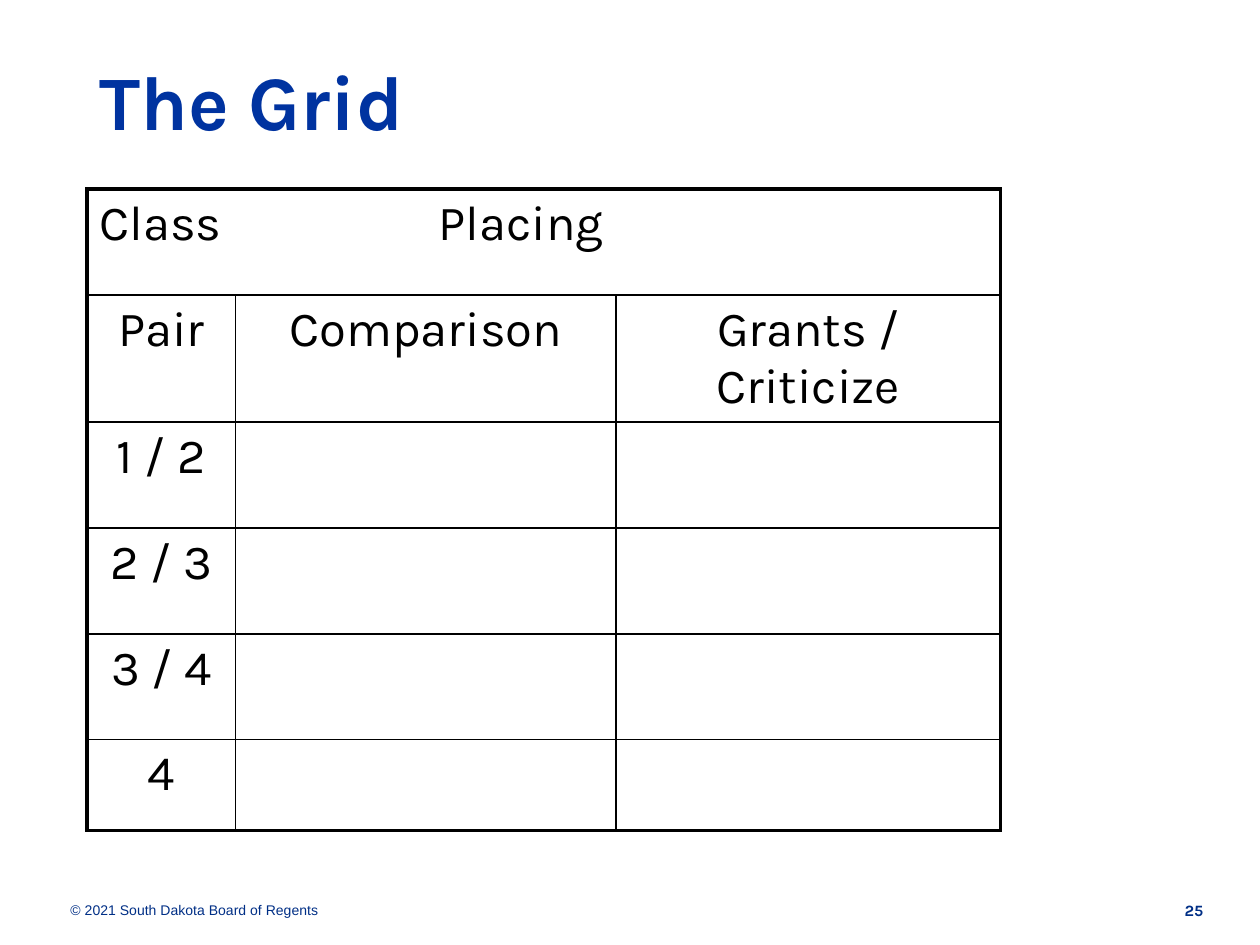
from typing import NamedTuple

from lxml.etree import SubElement
from pptx import Presentation
from pptx.dml.color import RGBColor
from pptx.enum.text import MSO_ANCHOR, PP_ALIGN
from pptx.oxml.ns import qn
from pptx.util import Inches, Pt

COLORS = {"title": "0033A0", "footer": "002F86", "ink": "000000"}
OUTER, INNER = 2.25, 1

COLUMN_WIDTHS = [1.18, 3.02, 3.05]
ROW_HEIGHTS = [0.84] * 5 + [0.72]
ROWS = [
    ["Class", "Placing", ""],
    ["Pair", "Comparison", "Grants / Criticize"],
    ["1 / 2", "", ""],
    ["2 / 3", "", ""],
    ["3 / 4", "", ""],
    ["4", "", ""],
]
HEADING_ALIGNMENTS = [PP_ALIGN.LEFT, PP_ALIGN.RIGHT, PP_ALIGN.CENTER]


class FooterPart(NamedTuple):
    text: str
    left: float
    width: float
    font_name: str
    size: int
    bold: bool
    alignment: PP_ALIGN


FOOTER = [
    FooterPart("© 2021 South Dakota Board of Regents", 0.56, 6.13, "Arial", 8, False, PP_ALIGN.LEFT),
    FooterPart("25", 7.3, 2.25, "Karla", 9, True, PP_ALIGN.RIGHT),
]


def style(paragraph, font_name: str, size: float, color: str, bold: bool = False) -> None:
    font = paragraph.font
    font.name, font.size, font.bold = font_name, Pt(size), bold
    font.color.rgb = RGBColor.from_string(COLORS[color])


def set_borders(cell, row: int, column: int) -> None:
    """Thick frame around the grid, thin rules inside, none between headings."""
    last_row, last_column = len(ROWS) - 1, len(COLUMN_WIDTHS) - 1
    side_rule = 0 if row == 0 else INNER
    widths = {
        "a:lnL": OUTER if column == 0 else side_rule,
        "a:lnR": OUTER if column == last_column else side_rule,
        "a:lnT": OUTER if row == 0 else INNER,
        "a:lnB": OUTER if row == last_row else INNER,
    }
    properties = cell._tc.get_or_add_tcPr()
    for tag, width in widths.items():
        line = SubElement(properties, qn(tag), w=str(Pt(width)))
        if width:
            fill = SubElement(line, qn("a:solidFill"))
            SubElement(fill, qn("a:srgbClr"), val=COLORS["ink"])
        else:
            SubElement(line, qn("a:noFill"))


def add_grid(slide) -> None:
    grid = slide.shapes.add_table(
        len(ROWS), len(COLUMN_WIDTHS), Inches(0.69), Inches(1.5),
        Inches(sum(COLUMN_WIDTHS)), Inches(sum(ROW_HEIGHTS)),
    ).table
    grid.first_row = grid.horz_banding = False
    for column, width in zip(grid.columns, COLUMN_WIDTHS):
        column.width = Inches(width)
    for row, height in zip(grid.rows, ROW_HEIGHTS):
        row.height = Inches(height)
    for r, labels in enumerate(ROWS):
        for c, label in enumerate(labels):
            cell = grid.cell(r, c)
            set_borders(cell, r, c)
            cell.fill.background()
            cell.text = label
            paragraph = cell.text_frame.paragraphs[0]
            paragraph.alignment = HEADING_ALIGNMENTS[c] if r == 0 else PP_ALIGN.CENTER
            style(paragraph, "Karla", 28, "ink")


def add_footer_part(slide, part: FooterPart) -> None:
    frame = slide.shapes.add_textbox(
        Inches(part.left), Inches(7.1), Inches(part.width), Inches(0.25)
    ).text_frame
    frame.margin_left = frame.margin_right = frame.margin_top = frame.margin_bottom = 0
    frame.word_wrap = True
    frame.vertical_anchor = MSO_ANCHOR.MIDDLE
    frame.text = part.text
    paragraph = frame.paragraphs[0]
    paragraph.alignment = part.alignment
    style(paragraph, part.font_name, part.size, "footer", part.bold)


def main() -> None:
    presentation = Presentation()
    presentation.slide_width, presentation.slide_height = Inches(10), Inches(7.5)
    slide = presentation.slides.add_slide(presentation.slide_layouts[5])

    # Title
    title = slide.shapes.title
    title.left, title.top = Inches(0.69), Inches(0.4)
    title.width, title.height = Inches(8.62), Inches(0.88)
    title.text_frame.text = "The Grid"
    title.text_frame.vertical_anchor = MSO_ANCHOR.MIDDLE
    heading = title.text_frame.paragraphs[0]
    heading.alignment = PP_ALIGN.LEFT
    heading.line_spacing = 0.9
    style(heading, "Karla", 44, "title", bold=True)

    # Grid and footer
    add_grid(slide)
    for part in FOOTER:
        add_footer_part(slide, part)

    presentation.save("out.pptx")


if __name__ == "__main__":
    main()
